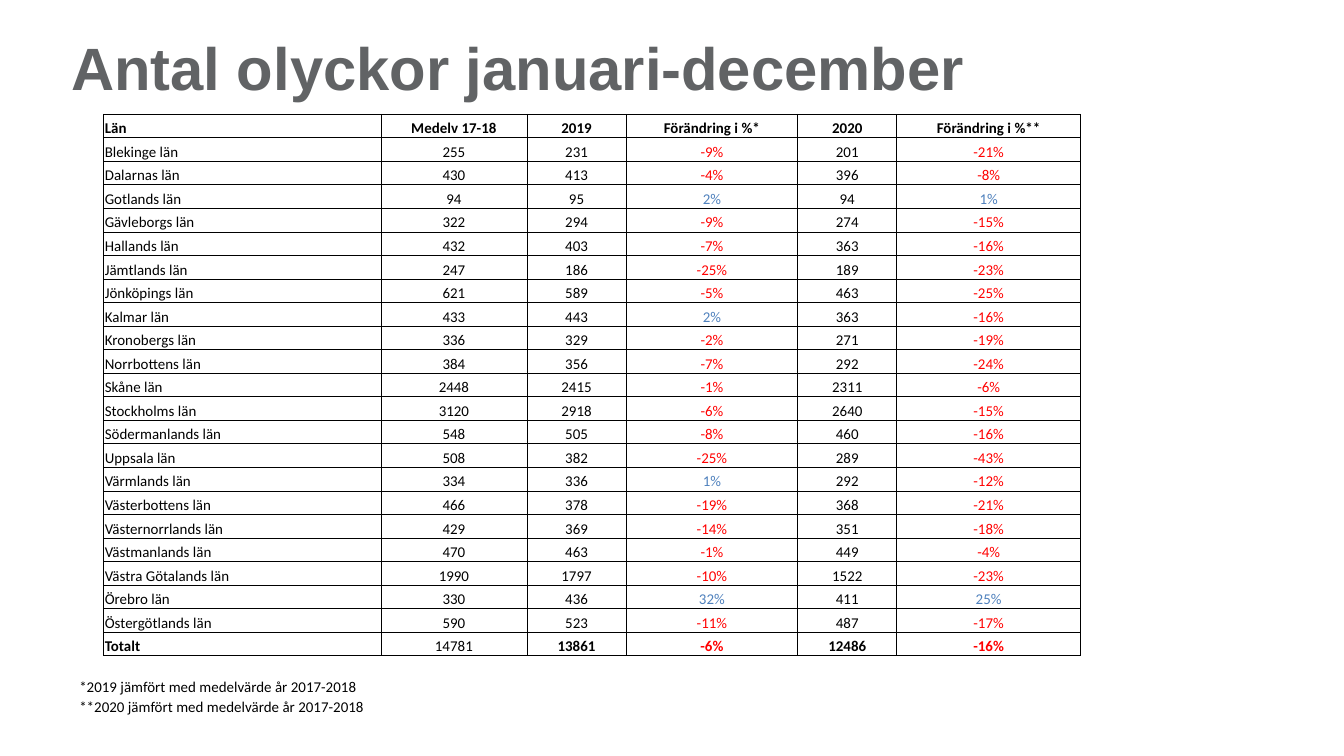
from lxml import etree
from pptx import Presentation
from pptx.dml.color import RGBColor
from pptx.enum.text import MSO_ANCHOR, MSO_AUTO_SIZE, PP_ALIGN
from pptx.oxml.ns import qn
from pptx.util import Inches, Pt

LEFT, CENTER = PP_ALIGN.LEFT, PP_ALIGN.CENTER
BOTTOM = MSO_ANCHOR.BOTTOM
TITLE_ONLY = 5

COLORS = {"title": "616365", "text": "000000", "decrease": "FF0000",
          "increase": "4F81BD", "border": "000000"}

TITLE = "Antal olyckor januari-december"
HEADER = ("Län", "Medelv 17-18", "2019", "Förändring i %*", "2020", "Förändring i %**")
COUNTIES = [
    ("Blekinge län", 255, 231, -9, 201, -21),
    ("Dalarnas län", 430, 413, -4, 396, -8),
    ("Gotlands län", 94, 95, 2, 94, 1),
    ("Gävleborgs län", 322, 294, -9, 274, -15),
    ("Hallands län", 432, 403, -7, 363, -16),
    ("Jämtlands län", 247, 186, -25, 189, -23),
    ("Jönköpings län", 621, 589, -5, 463, -25),
    ("Kalmar län", 433, 443, 2, 363, -16),
    ("Kronobergs län", 336, 329, -2, 271, -19),
    ("Norrbottens län", 384, 356, -7, 292, -24),
    ("Skåne län", 2448, 2415, -1, 2311, -6),
    ("Stockholms län", 3120, 2918, -6, 2640, -15),
    ("Södermanlands län", 548, 505, -8, 460, -16),
    ("Uppsala län", 508, 382, -25, 289, -43),
    ("Värmlands län", 334, 336, 1, 292, -12),
    ("Västerbottens län", 466, 378, -19, 368, -21),
    ("Västernorrlands län", 429, 369, -14, 351, -18),
    ("Västmanlands län", 470, 463, -1, 449, -4),
    ("Västra Götalands län", 1990, 1797, -10, 1522, -23),
    ("Örebro län", 330, 436, 32, 411, 25),
    ("Östergötlands län", 590, 523, -11, 487, -17),
]
TOTAL = ("Totalt", 14781, 13861, -6, 12486, -16)
FOOTNOTES = ["",
             "*2019 jämfört med medelvärde år 2017-2018",
             "**2020 jämfört med medelvärde år 2017-2018"]

SLIDE_WIDTH = 10
SLIDE_HEIGHT = SLIDE_WIDTH * 9 / 16
PERCENT_COLUMNS = (3, 5)
MEAN_COLUMN = 1
COLUMN_SHARES = (2.07, 1.09, 0.74, 1.28, 0.74, 1.37)
ACCIDENTS_WIDTH, ACCIDENTS_HEIGHT = 7.27, 4.03
FOOTNOTES_WIDTH, FOOTNOTES_HEIGHT = 3.15, 0.42


def write_text(frame, text, size=8, font="Calibri", color="text", bold=False, align=LEFT):
    paragraph = frame.paragraphs[0]
    paragraph.alignment = align
    if not text:
        etree.SubElement(paragraph._p, qn("a:endParaRPr"), sz=str(size * 100))
        return
    run = paragraph.add_run()
    run.text = text
    run.font.size = Pt(size)
    run.font.name = font
    run.font.bold = bold
    run.font.color.rgb = RGBColor.from_string(COLORS[color])


def set_borders(cell, color=None):
    """Draw a thin line on every side of the cell, or none without a color."""
    properties = cell._tc.get_or_add_tcPr()
    for side in ("lnL", "lnR", "lnT", "lnB"):
        line = etree.SubElement(properties, qn(f"a:{side}"), w=str(Pt(0.5)))
        if color:
            fill = etree.SubElement(line, qn("a:solidFill"))
            etree.SubElement(fill, qn("a:srgbClr"), val=COLORS[color])
        else:
            etree.SubElement(line, qn("a:noFill"))


def add_plain_table(slide, left, top, width, height, column_shares, row_count):
    table = slide.shapes.add_table(
        row_count, len(column_shares), Inches(left), Inches(top),
        Inches(width), Inches(height)).table
    table.first_row = table.horz_banding = False
    for column, share in zip(table.columns, column_shares):
        column.width = Inches(width * share / sum(column_shares))
    for row in table.rows:
        row.height = Inches(height / row_count)
    return table


def fill_cell(cell, text, border=None, **text_format):
    set_borders(cell, border)
    cell.fill.background()
    cell.vertical_anchor = BOTTOM
    cell.margin_left = cell.margin_right = cell.margin_top = Inches(0.01)
    cell.margin_bottom = 0
    write_text(cell.text_frame, text, **text_format)


def add_title(slide):
    title = slide.shapes.title
    title.left, title.top = Inches(0.43), Inches(0.18)
    title.width, title.height = Inches(8.87), Inches(0.61)
    frame = title.text_frame
    frame.auto_size = MSO_AUTO_SIZE.NONE
    frame.word_wrap = True
    frame.vertical_anchor = BOTTOM
    frame.margin_left = frame.margin_right = Inches(0.1)
    frame.margin_top, frame.margin_bottom = 0, Inches(0.03)
    write_text(frame, TITLE, size=32, font="Arial", color="title", bold=True)


def add_accidents(slide):
    rows = [HEADER, *COUNTIES, TOTAL]
    table = add_plain_table(slide, 0.77, 0.85, ACCIDENTS_WIDTH, ACCIDENTS_HEIGHT,
                            COLUMN_SHARES, len(rows))
    for row_index, values in enumerate(rows):
        for column_index, value in enumerate(values):
            text, color = str(value), "text"
            if column_index in PERCENT_COLUMNS and values is not HEADER:
                text = f"{value}%"
                color = "decrease" if value < 0 else "increase"
            bold = values is HEADER or (values is TOTAL and column_index != MEAN_COLUMN)
            fill_cell(table.cell(row_index, column_index), text, border="border",
                      color=color, bold=bold, align=CENTER if column_index else LEFT)


def add_footnotes(slide):
    table = add_plain_table(slide, 0.58, 4.89, FOOTNOTES_WIDTH, FOOTNOTES_HEIGHT,
                            [1], len(FOOTNOTES))
    for row_index, footnote in enumerate(FOOTNOTES):
        fill_cell(table.cell(row_index, 0), footnote)


def main():
    presentation = Presentation()
    presentation.slide_width = Inches(SLIDE_WIDTH)
    presentation.slide_height = Inches(SLIDE_HEIGHT)
    slide = presentation.slides.add_slide(presentation.slide_layouts[TITLE_ONLY])
    add_title(slide)
    add_footnotes(slide)
    add_accidents(slide)
    presentation.save("out.pptx")


if __name__ == "__main__":
    main()
